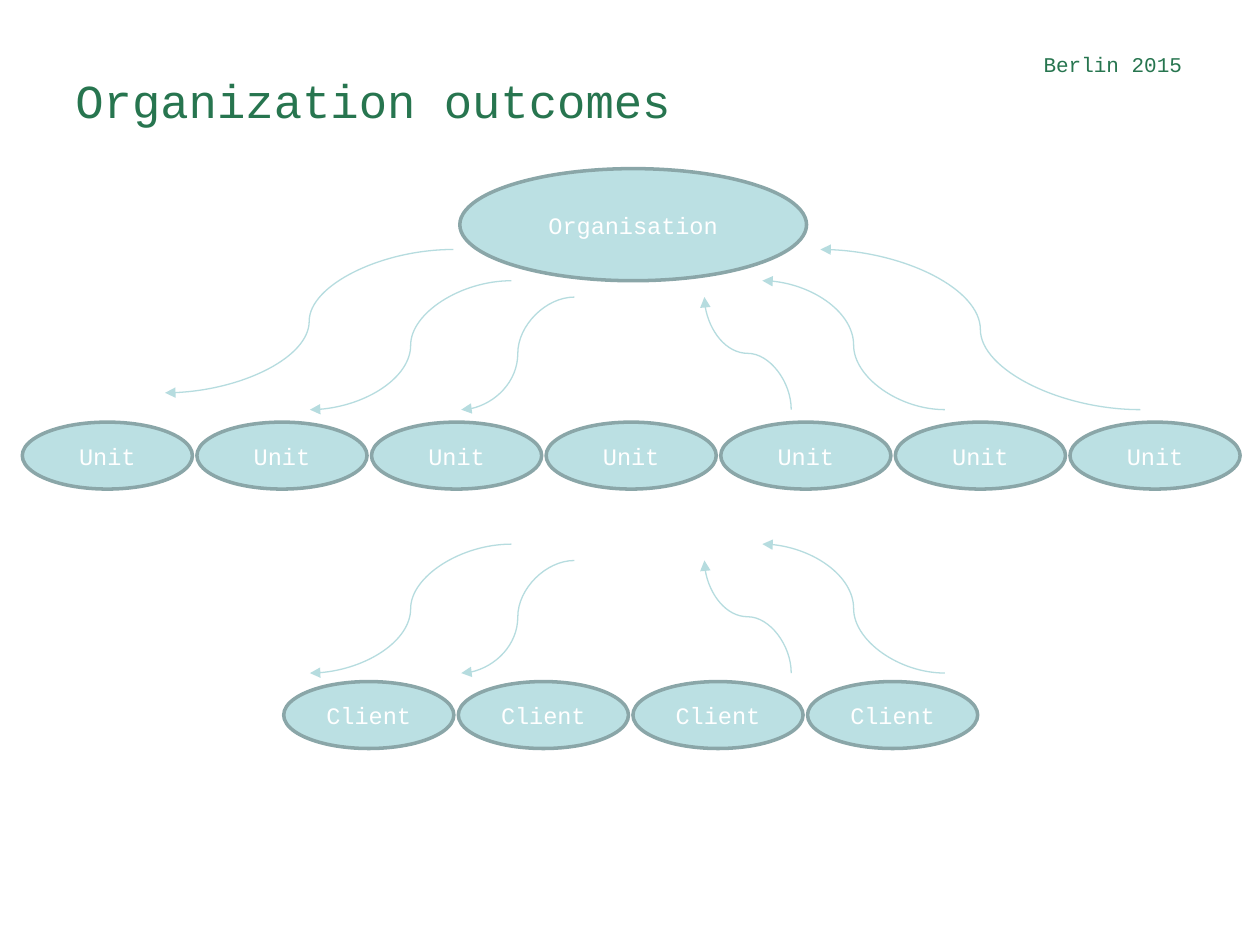
from pptx import Presentation
from pptx.dml.color import RGBColor
from pptx.enum.shapes import MSO_CONNECTOR as Link, MSO_SHAPE as Kind
from pptx.enum.text import MSO_ANCHOR as Anchor, PP_ALIGN as Align
from pptx.oxml.ns import qn
from pptx.util import Cm, Pt
from lxml.etree import SubElement

FONT = "Courier New"
GREEN, WHITE = "27754F", "FFFFFF"
FILL, EDGE, ARROW = "BBE0E3", "8AA6A8", "B6DCDF"
STEP, WIDE, HIGH = 3.52, 3.43, 1.35


def paint(color, code):
    color.rgb = RGBColor.from_string(code)


def write(shape, text, size, code, align, anchor):
    frame = shape.text_frame
    frame.word_wrap = True
    frame.vertical_anchor = anchor
    para = frame.paragraphs[0]
    para.text = text
    para.alignment = align
    para.font.name = FONT
    para.font.size = Pt(size)
    paint(para.font.color, code)


def label(slide, x, y, w, h, text, size, align, anchor):
    box = slide.shapes.add_textbox(Cm(x), Cm(y), Cm(w), Cm(h))
    write(box, text, size, GREEN, align, anchor)


def oval(slide, x, y, w, h, text):
    shape = slide.shapes.add_shape(Kind.OVAL, Cm(x), Cm(y), Cm(w), Cm(h))
    shape.shadow.inherit = False
    shape.fill.solid()
    paint(shape.fill.fore_color, FILL)
    paint(shape.line.color, EDGE)
    shape.line.width = Pt(2)
    write(shape, text, 13.5, WHITE, Align.CENTER, Anchor.MIDDLE)


def row(slide, x, y, text, count):
    for i in range(count):
        oval(slide, x + i * STEP, y, WIDE, HIGH, text)


def arrow(slide, x1, y1, x2, y2):
    line = slide.shapes.add_connector(
        Link.CURVE, Cm(x1), Cm(y1), Cm(x2), Cm(y2))
    paint(line.line.color, ARROW)
    line.line.width = Pt(0.75)
    SubElement(line.line._get_or_add_ln(), qn("a:tailEnd"), type="triangle")
    SubElement(line._element.spPr, qn("a:effectLst"))
    return line


def climb(slide, x1, y1, x2, y2):
    mid_x, mid_y = (x1 + x2) / 2, (y1 + y2) / 2
    dx, dy = (y1 - y2) / 2, (x1 - x2) / 2
    line = arrow(slide, mid_x - dx, mid_y + dy, mid_x + dx, mid_y - dy)
    line.rotation = 270


def inner(slide, x, y):
    foot = y + 2.6
    arrow(slide, x + 4.06, y, x, foot)
    arrow(slide, x + 5.33, y + 0.33, x + 3.05, foot)
    arrow(slide, x + 12.8, foot, x + 9.12, y)
    climb(slide, x + 9.7, foot, x + 7.95, y + 0.33)


def outer(slide, x, y):
    arrow(slide, x + 5.81, y, x, y + 2.89)
    arrow(slide, x + 19.66, y + 3.23, x + 13.21, y)


def main():
    deck = Presentation()
    deck.slide_width, deck.slide_height = Cm(25.4), Cm(19.05)
    slide = deck.slides.add_slide(deck.slide_layouts[6])
    oval(slide, 9.27, 3.4, 6.99, 2.26, "Organisation")
    row(slide, 0.45, 8.51, "Unit", 7)
    row(slide, 5.72, 13.74, "Client", 4)
    outer(slide, 3.33, 5.03)
    for y in (5.66, 10.97):
        inner(slide, 6.25, y)
    label(slide, 1.27, 0.91, 22.86, 2.21, "Organization outcomes", 27,
          Align.LEFT, Anchor.MIDDLE)
    label(slide, 12.09, 0.91, 11.99, 0.99, "Berlin 2015", 12,
          Align.RIGHT, Anchor.TOP)
    deck.save("out.pptx")


if __name__ == "__main__":
    main()
